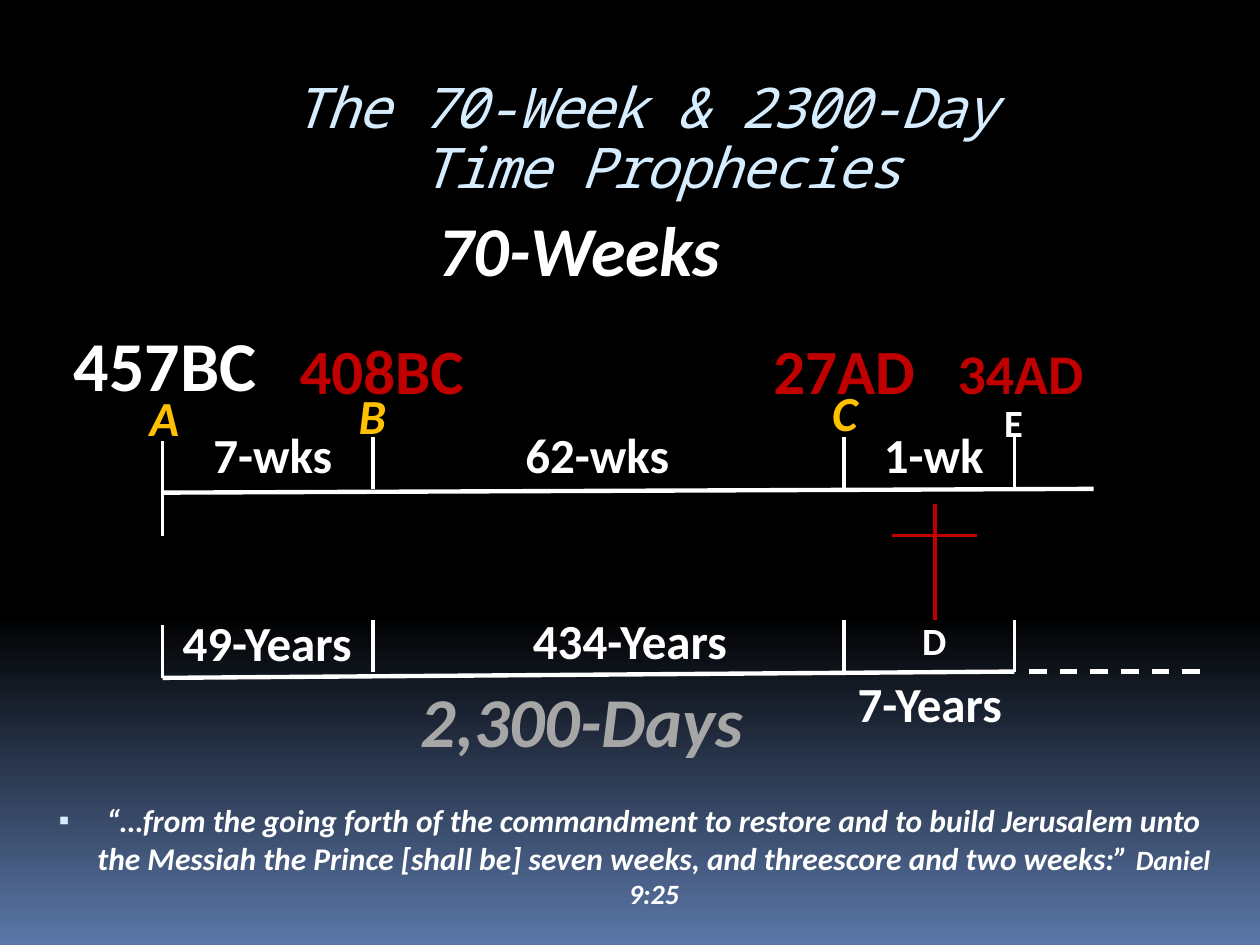
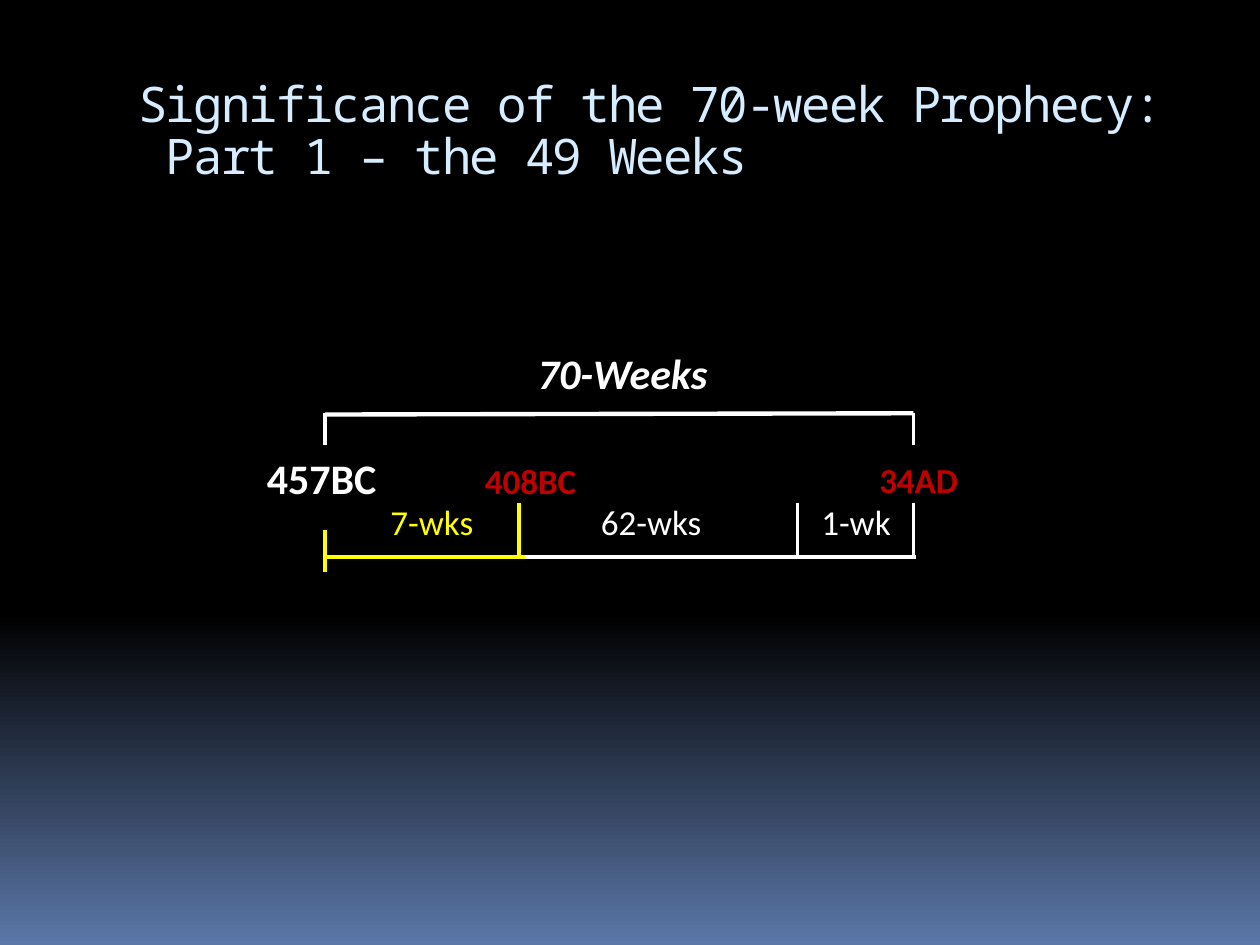
from lxml import etree
from pptx import Presentation
from pptx import util as u
from pptx.dml.color import RGBColor
from pptx.enum import dml, shapes, text
from pptx.oxml import ns

BLACK = RGBColor(0x00, 0x00, 0x00)
DUSK = RGBColor(0x5B, 0x77, 0xA8)
ICE = RGBColor(0xD6, 0xEC, 0xFF)
WHITE = RGBColor(0xFF, 0xFF, 0xFF)
RED = RGBColor(0xC0, 0x00, 0x00)
GOLD = RGBColor(0xFF, 0xC0, 0x00)
GREY = RGBColor(0xA6, 0xA6, 0xA6)
YELLOW = RGBColor(0xFF, 0xFF, 0x00)

BODY_FONT = "Calibri"
TITLE_FONT = "Noto Sans Mono"
CENTER = text.PP_ALIGN.CENTER
LEFT = text.PP_ALIGN.LEFT
BOLD = {"bold": True}
BOLD_ITALIC = {"bold": True, "italic": True}


def add_page(deck):
    page = deck.slides.add_slide(deck.slide_layouts[6])
    fill = page.background.fill
    fill.gradient()
    fill.gradient_angle = 270
    for stop, position, color in zip(fill.gradient_stops, (0.65, 1), (BLACK, DUSK)):
        stop.position = position
        stop.color.rgb = color
    return page


def add_box(page, left, top, width, height, align):
    box = page.shapes.add_textbox(*map(u.Inches, (left, top, width, height)))
    box.text_frame.word_wrap = True
    para = box.text_frame.paragraphs[0]
    para.alignment = align
    return para


def format_span(span, size, color, name=BODY_FONT, **formats):
    formats.update(size=u.Pt(size), name=name)
    for key, value in formats.items():
        setattr(span.font, key, value)
    span.font.color.rgb = color


def add_title(page, lines, size, align, **formats):
    para = add_box(page, 1, 0.59, 8.5, 1, align)
    para.line_spacing = 0.89
    for number, line in enumerate(lines):
        if number:
            para.add_line_break()
        span = para.add_run()
        span.text = line
        format_span(span, size, ICE, TITLE_FONT, **formats)
        span.font._element.set("spc", "-100")


def add_label(page, wording, left, top, width, size, color=WHITE, align=CENTER, **formats):
    height = round(size * 1.22 / 72 + 0.1, 2)
    span = add_box(page, left, top, width, height, align).add_run()
    span.text = wording
    format_span(span, size, color, **formats)


def add_line(page, start, end, color=WHITE, weight=2.0, dashed=False):
    line = page.shapes.add_connector(
        shapes.MSO_CONNECTOR.STRAIGHT, *map(u.Inches, (*start, *end)))
    line.line.color.rgb = color
    line.line.width = u.Pt(weight)
    if dashed:
        line.line.dash_style = dml.MSO_LINE.DASH
    etree.SubElement(line._element.spPr, ns.qn("a:effectLst"))


def add_ticks(page, places, top, bottom, color=WHITE):
    for place in places:
        add_line(page, (place, top), (place, bottom), color)


def add_bullet(para, symbol, color, percent, margin, indent):
    props = para._p.get_or_add_pPr()
    props.set("marL", str(u.Inches(margin)))
    props.set("indent", str(u.Inches(indent)))
    tint = etree.SubElement(props, ns.qn("a:buClr"))
    etree.SubElement(tint, ns.qn("a:srgbClr"), val=str(color))
    etree.SubElement(props, ns.qn("a:buSzPct"), val=str(percent * 1000))
    etree.SubElement(props, ns.qn("a:buFont"), typeface=BODY_FONT)
    etree.SubElement(props, ns.qn("a:buChar"), char=symbol)


def add_verse(page):
    para = add_box(page, 0.21, 6.31, 9.51, 0.77, CENTER)
    para.space_before = u.Pt(7)
    add_bullet(para, "▪", ICE, 95, 0.45, -0.38)
    verse = ("“…from the going forth of the commandment to restore and to build "
             "Jerusalem unto the Messiah the Prince [shall be] seven weeks, "
             "and threescore and two weeks:” ")
    for wording, size in ((verse, 18), ("Daniel 9:25", 16)):
        span = para.add_run()
        span.text = wording
        format_span(span, size, WHITE, **BOLD_ITALIC)


def add_prophecy_page(deck):
    page = add_page(deck)
    start, rebuilt, anointed, end = 1.29, 2.96, 6.7, 8.05
    add_title(page, ("The 70-Week & 2300-Day ", "Time Prophecies"), 32, CENTER, italic=True)
    add_verse(page)

    add_line(page, (start, 3.91), (8.68, 3.88), weight=2.5)
    add_line(page, (start, 5.38), (end, 5.33), weight=2.5)
    add_line(page, (8.17, 5.33), (9.59, 5.33), weight=2.5, dashed=True)
    add_ticks(page, (start,), 3.5, 4.25)
    add_ticks(page, (start,), 4.96, 5.38)
    for top, bottom in ((3.47, 3.88), (4.92, 5.33)):
        add_ticks(page, (rebuilt, anointed, end), top, bottom)
    add_line(page, (7.08, 4.25), (7.75, 4.25), RED, 2.25)
    add_line(page, (7.42, 4), (7.42, 4.92), RED, 2.25)

    for wording, left, top, width, size, color in (
        ("457BC", 0.34, 2.5, 1.94, 40, WHITE),
        ("408BC", 2.13, 2.58, 1.8, 36, RED),
        ("27AD", 5.95, 2.58, 1.5, 36, RED),
        ("34AD", 7.42, 2.64, 1.36, 32, RED),
        ("D", 7.13, 4.85, 0.57, 22, WHITE),
        ("E", 7.76, 3.12, 0.57, 22, WHITE),
    ):
        add_label(page, wording, left, top, width, size, color, **BOLD)
    for wording, left, top, width in (
        ("7-wks", 1.53, 3.32, 1.27),
        ("62-wks", 3.93, 3.32, 1.62),
        ("1-wk", 6.82, 3.32, 1.18),
        ("49-Years", 1.15, 4.81, 1.94),
        ("434-Years", 3.93, 4.8, 2.14),
        ("7-Years", 6.6, 5.3, 1.56),
    ):
        add_label(page, wording, left, top, width, 28, **BOLD)
    for letter, left, top in (("A", 1.02, 3.03), ("B", 2.67, 3.01), ("C", 6.42, 2.99)):
        add_label(page, letter, left, top, 0.57, 28, GOLD, **BOLD_ITALIC)
    add_label(page, "70-Weeks", 3.38, 1.59, 2.83, 40, align=LEFT, **BOLD_ITALIC)
    add_label(page, "2,300-Days", 3.24, 5.33, 3.17, 40, GREY, LEFT, **BOLD_ITALIC)


def add_significance_page(deck):
    page = add_page(deck)
    start, rebuilt, anointed, end = 2.58, 4.12, 6.33, 7.25
    add_title(page, ("Significance of the 70-week Prophecy:", " Part 1 – the 49 Weeks"), 28, LEFT)

    add_line(page, (start, 3.29), (end, 3.28), weight=2.5)
    add_ticks(page, (start, end), 3.28, 3.53)
    add_ticks(page, (start,), 4.21, 4.54, YELLOW)
    add_ticks(page, (rebuilt,), 3.99, 4.41, YELLOW)
    add_ticks(page, (anointed, end), 3.99, 4.41)
    add_line(page, (2.6, 4.42), (7.27, 4.42), weight=2.5)
    add_line(page, (start, 4.42), (4.17, 4.42), YELLOW, 2.5)

    for wording, left, top, width, size, color, formats in (
        ("70-Weeks", 4.17, 2.71, 1.75, 24, WHITE, BOLD_ITALIC),
        ("457BC", 2.02, 3.54, 1.15, 24, WHITE, BOLD),
        ("408BC", 3.75, 3.6, 1.14, 20, RED, BOLD),
        ("34AD", 6.88, 3.59, 0.95, 20, RED, BOLD),
        ("7-wks", 3, 3.92, 0.92, 20, YELLOW, {}),
        ("62-wks", 4.67, 3.92, 1.08, 20, WHITE, {}),
        ("1-wk", 6.42, 3.92, 0.83, 20, WHITE, {}),
    ):
        add_label(page, wording, left, top, width, size, color, LEFT, **formats)


def main():
    deck = Presentation()
    deck.slide_width = u.Inches(10)
    deck.slide_height = u.Inches(7.5)
    add_prophecy_page(deck)
    add_significance_page(deck)
    deck.save("out.pptx")


if __name__ == "__main__":
    main()
